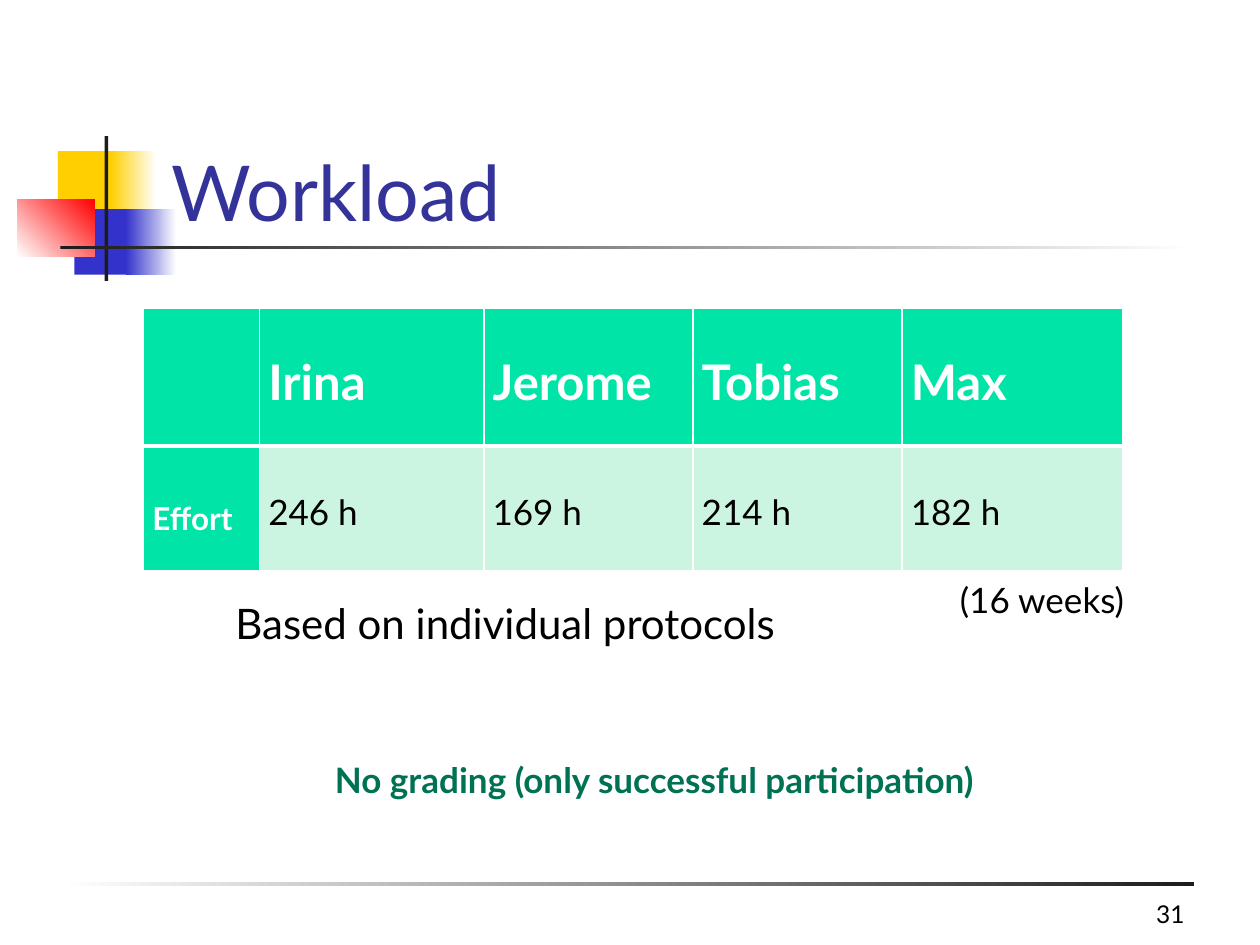
from lxml import etree
from pptx import Presentation
from pptx.dml.color import RGBColor
from pptx.enum.shapes import MSO_SHAPE
from pptx.enum.text import MSO_ANCHOR, PP_ALIGN
from pptx.oxml.ns import qn
from pptx.util import Inches, Pt

RECT = MSO_SHAPE.RECTANGLE
TOP, MIDDLE, BOTTOM = MSO_ANCHOR.TOP, MSO_ANCHOR.MIDDLE, MSO_ANCHOR.BOTTOM
LEFT, RIGHT = PP_ALIGN.LEFT, PP_ALIGN.RIGHT

FONT = "Lato"
WHITE, BLACK, INK = "FFFFFF", "000000", "1C1C1C"
YELLOW, BLUE, RED = "FFCF01", "3333CC", "FF0000"
TITLE_BLUE, DARK_GREEN = "333399", "007254"
GREEN, PALE_GREEN = "00E4A8", "CCF5E1"


def rgb(value):
    return RGBColor.from_string(value)


def write(tf, text, size=20, color=BLACK, bold=False, align=LEFT, spacing=None):
    p = tf.paragraphs[0]
    p.alignment = align
    if spacing:
        p.line_spacing = spacing
    r = p.add_run()
    r.text = text
    r.font.name = FONT
    r.font.size = Pt(size)
    r.font.bold = bold
    r.font.color.rgb = rgb(color)


def set_border(cell, side, width, color=WHITE):
    ln = etree.SubElement(cell._tc.get_or_add_tcPr(), qn(f"a:ln{side}"), w=str(Pt(width)))
    fill = etree.SubElement(ln, qn("a:solidFill"))
    etree.SubElement(fill, qn("a:srgbClr"), val=color)


class SlideBuilder:
    def __init__(self, slide):
        self.s = slide

    def block(self, x, y, w, h, color, end=None, angle=0):
        """Plain rectangle, or one fading from color to end."""
        sp = self.s.shapes.add_shape(RECT, Inches(x), Inches(y), Inches(w), Inches(h))
        sp.shadow.inherit = False
        sp.line.fill.background()
        if end is None:
            sp.fill.solid()
            sp.fill.fore_color.rgb = rgb(color)
        else:
            sp.fill.gradient()
            sp.fill.gradient_angle = angle
            for stop, value in zip(sp.fill.gradient_stops, (color, end)):
                stop.color.rgb = rgb(value)

    def text(self, x, y, w, h, text, anchor=TOP, wrap=False, **style):
        sp = self.s.shapes.add_textbox(Inches(x), Inches(y), Inches(w), Inches(h))
        tf = sp.text_frame
        tf.word_wrap = wrap
        tf.vertical_anchor = anchor
        write(tf, text, **style)

    def cell(self, cell, text, fill, borders, anchor=MIDDLE, top=0, **style):
        cell.margin_left = cell.margin_right = Inches(0.07)
        cell.margin_top, cell.margin_bottom = Inches(top), 0
        cell.vertical_anchor = anchor
        for side, width in borders.items():
            set_border(cell, side, width)
        cell.fill.solid()
        cell.fill.fore_color.rgb = rgb(fill)
        if text:
            write(cell.text_frame, text, spacing=1.15, **style)

    def workload_table(self, x, y, widths, heights, names, hours):
        frame = self.s.shapes.add_table(len(heights), len(widths), Inches(x), Inches(y),
                                        Inches(sum(widths)), Inches(sum(heights)))
        table = frame.table
        table.horz_banding = False
        for column, width in zip(table.columns, widths):
            column.width = Inches(width)
        for row, height in zip(table.rows, heights):
            row.height = Inches(height)

        head_borders = {"L": 1, "R": 1, "T": 1, "B": 3}
        body_borders = {"L": 1, "R": 1, "T": 3, "B": 1}
        head = dict(fill=GREEN, color=WHITE, bold=True)
        for i, name in enumerate(["", *names]):
            self.cell(table.cell(0, i), name, borders=head_borders, size=28, **head)
        self.cell(table.cell(1, 0), "Effort", borders=body_borders, size=18,
                  anchor=TOP, top=0.38, **head)
        for i, value in enumerate(hours, start=1):
            self.cell(table.cell(1, i), f"{value} h", PALE_GREEN, body_borders)


def main():
    prs = Presentation()
    prs.slide_width, prs.slide_height = Inches(10), Inches(7.5)
    b = SlideBuilder(prs.slides.add_slide(prs.slide_layouts[6]))

    # Corner ornament
    b.block(0.46, 1.2, 0.48, 0.52, YELLOW)
    b.block(0.88, 1.2, 0.36, 0.52, YELLOW, WHITE)
    b.block(0.59, 1.66, 0.46, 0.52, BLUE)
    b.block(1, 1.66, 0.4, 0.52, BLUE, WHITE)
    b.block(0.14, 1.58, 0.61, 0.46, WHITE, RED, angle=45)
    b.block(0.83, 1.08, 0.03, 1.15, INK)

    # Rules under the title and above the footer
    b.block(0.48, 1.95, 9, 0.03, INK, WHITE)
    b.block(0.48, 7, 9, 0.03, WHITE, INK)

    # Title and page number
    b.text(1.26, 0.68, 8.52, 1.25, "Workload", anchor=BOTTOM, wrap=True,
           size=44, color=TITLE_BLUE)
    b.text(7.42, 7.17, 2.08, 0.25, "31", anchor=BOTTOM, wrap=True, size=14, align=RIGHT)

    # Hours per person
    b.workload_table(1.14, 2.45, [0.92, 1.78, 1.66, 1.66, 1.75], [1.09, 0.99],
                     ["Irina", "Jerome", "Tobias", "Max"], [246, 169, 214, 182])

    # Remarks
    b.text(1.77, 4.69, 4.53, 0.5, "Based on individual protocols", size=24)
    b.text(7.52, 4.54, 1.58, 0.44, "(16 weeks)")
    b.text(2.56, 5.97, 6.09, 0.44, "No grading (only successful participation)",
           color=DARK_GREEN, bold=True)

    prs.save("out.pptx")


if __name__ == "__main__":
    main()
